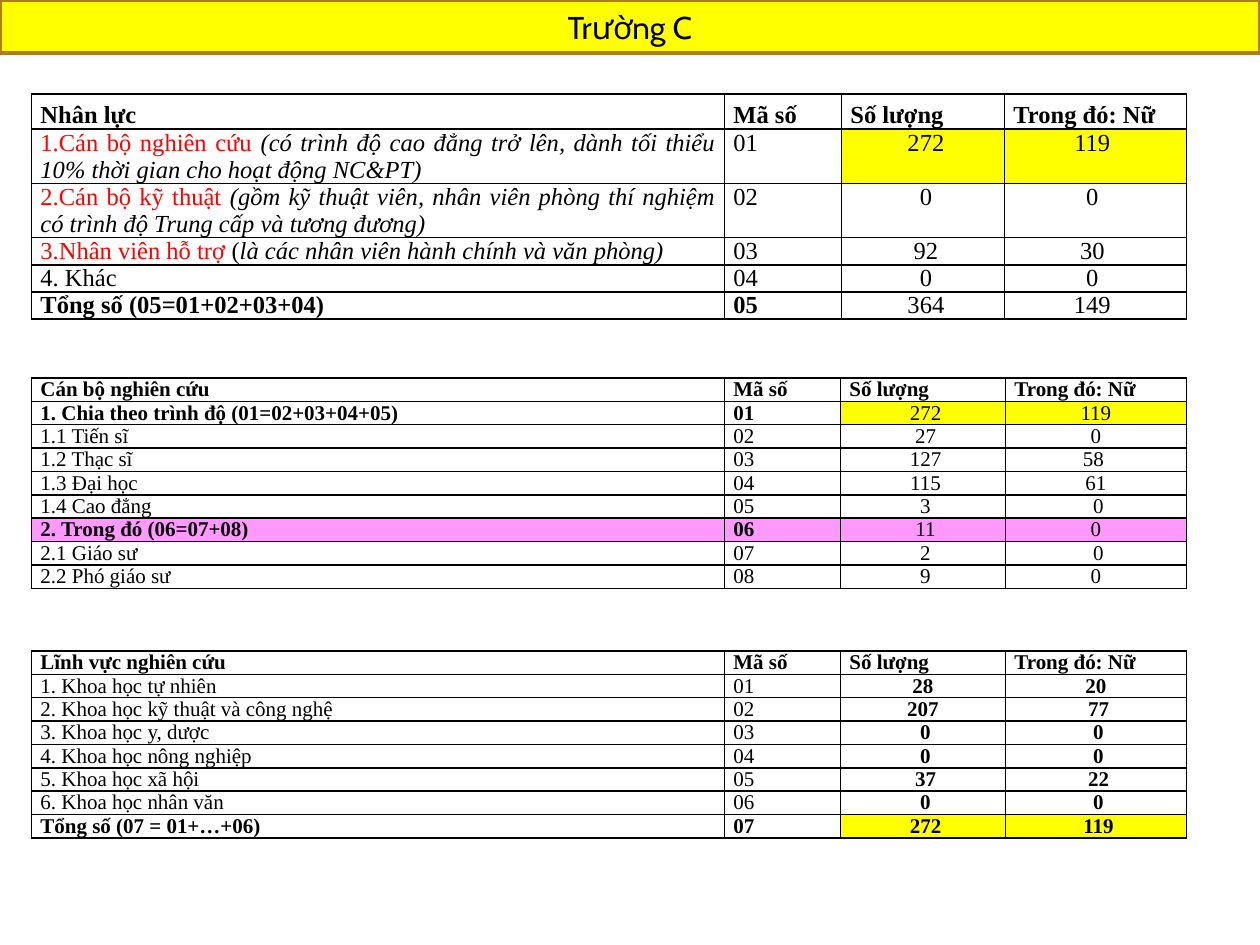
from lxml import etree
from pptx import Presentation
from pptx.dml.color import RGBColor
from pptx.enum.shapes import MSO_SHAPE
from pptx.enum.text import MSO_ANCHOR, PP_ALIGN
from pptx.oxml.ns import qn
from pptx.util import Emu, Pt

RECT = MSO_SHAPE.RECTANGLE
MIDDLE = MSO_ANCHOR.MIDDLE
CENTER, JUSTIFY = PP_ALIGN.CENTER, PP_ALIGN.JUSTIFY
PX = 914400 // 126
BLACK, RED, YELLOW, PINK = "000000", "FF0000", "FFFF00", "FF99FF"
HEAD = ("Mã số", "Số lượng", "Trong đó: Nữ")

# Content: "~" stands for a no-break space; a label may be a list of
# (text, format) runs; fills map a row to (first column, colour)
TITLE = "Trường C"
TABLES = [
    dict(
        top=94, size=14, cols=(693, 117, 163, 182),
        heights=(35, 54, 54, 27, 27, 27), spacing=1.3,
        bold={5}, strong=False, fills={1: (2, YELLOW)},
        rows=[
            ("Nhân lực", *HEAD),
            ([("1.Cán bộ nghiên cứu ", dict(color=RED)),
              ("(có trình độ cao đẳng trở lên, dành tối thiểu 10% thời gian "
               "cho hoạt động NC&PT)", dict(italic=True))],
             "01", "~272", "119~"),
            ([("2.Cán bộ kỹ thuật ", dict(color=RED)),
              ("(gồm kỹ thuật viên, nhân viên phòng thí nghiệm có trình độ "
               "Trung cấp và tương đương)", dict(italic=True))],
             "02", "~0", "0~"),
            ([("3.Nhân viên hỗ trợ ", dict(color=RED)), ("(", {}),
              ("là các nhân viên hành chính và văn phòng)",
               dict(italic=True))],
             "03", "~92", "30~"),
            ("4. Khác ", "04", "~0", "0~"),
            ("Tổng số (05=01+02+03+04)", "05", "~364", "149~"),
        ]),
    dict(
        top=378, size=12, cols=(693, 116, 165, 181),
        heights=(23,) * 9, spacing=None,
        bold={1, 6}, strong=False, fills={1: (2, YELLOW), 6: (0, PINK)},
        rows=[
            ("Cán bộ nghiên cứu", *HEAD),
            ("1. Chia theo trình độ (01=02+03+04+05)", "01", "~272", "119"),
            ("1.1 Tiến sĩ", "02", "~27", "0"),
            ("1.2 Thạc sĩ", "03", "~127", "58~"),
            ("1.3 Đại học", "04", "~115", "61"),
            ("1.4 Cao đẳng", "05", "~3", "~0"),
            ("2. Trong đó (06=07+08)", "06", "~11", "0"),
            ("2.1 Giáo sư", "07", "~2", "~0"),
            ("2.2 Phó giáo sư", "08", "~9", "0"),
        ]),
    dict(
        top=651, size=12, cols=(693, 116, 165, 181),
        heights=(23,) * 8, spacing=None,
        bold={7}, strong=True, fills={7: (2, YELLOW)},
        rows=[
            ("Lĩnh vực nghiên cứu", *HEAD),
            ("1. Khoa học tự nhiên", "01", "28", " 20~"),
            ("2. Khoa học kỹ thuật và công nghệ", "02", "207", "~77"),
            ("3. Khoa học y, dược", "03", "~0", "~0"),
            ("4. Khoa học nông nghiệp", "04", "~0", "~0"),
            ("5. Khoa học xã hội", "05", "~37", "~22"),
            ("6. Khoa học nhân văn ", "06", "~0", "~0"),
            ("Tổng số (07 = 01+…+06)", "07", "~272", "~119"),
        ]),
]


def px(n):
    return Emu(n * PX)


def rgb(code):
    return RGBColor.from_string(code)


def write(frame, text, size, font="Times New Roman", align=CENTER, bold=False,
          gap=0, spacing=None):
    para = frame.paragraphs[0]
    para.alignment = align
    para.space_before = para.space_after = Pt(gap)
    if spacing:
        para.line_spacing = spacing
    runs = [(text, {})] if isinstance(text, str) else text
    for part, form in runs:
        run = para.add_run()
        run.text = part.replace("~", chr(160))
        run.font.name, run.font.size = font, Pt(size)
        run.font.bold = bold
        run.font.italic = form.get("italic", False)
        run.font.color.rgb = rgb(form.get("color", BLACK))


def border(cell):
    props = cell._tc.get_or_add_tcPr()
    for side in ("lnL", "lnR", "lnT", "lnB"):
        line = etree.SubElement(props, qn("a:" + side), w=str(Pt(1)))
        fill = etree.SubElement(line, qn("a:solidFill"))
        etree.SubElement(fill, qn("a:srgbClr"), val=BLACK)


def paint(cell, color):
    if color:
        cell.fill.solid()
        cell.fill.fore_color.rgb = rgb(color)
    else:
        cell.fill.background()


def add_grid(slide, data):
    rows, cols, heights = data["rows"], data["cols"], data["heights"]
    grid = slide.shapes.add_table(
        len(rows), len(cols), Emu(63 * PX // 2), px(data["top"]),
        px(sum(cols)), px(sum(heights))).table
    grid.first_row = grid.horz_banding = False
    for col, width in zip(grid.columns, cols):
        col.width = px(width)
    for r, row in enumerate(rows):
        grid.rows[r].height = px(heights[r])
        first, color = data["fills"].get(r, (len(cols), None))
        for c, text in enumerate(row):
            cell = grid.cell(r, c)
            cell.margin_left = cell.margin_right = px(9)
            cell.margin_top = cell.margin_bottom = 0
            border(cell)
            paint(cell, color if c >= first else None)
            number = r > 0 and c > 1
            bold = data["strong"] if number else r == 0 or r in data["bold"]
            write(cell.text_frame, text, data["size"], bold=bold, gap=3,
                  align=CENTER if number else JUSTIFY,
                  spacing=data["spacing"] if r == 0 else None)


def main():
    deck = Presentation()
    deck.slide_width, deck.slide_height = px(1260), px(945)
    slide = deck.slides.add_slide(deck.slide_layouts[6])

    # Tables
    for data in TABLES:
        add_grid(slide, data)

    # Title bar
    bar = slide.shapes.add_shape(RECT, 0, 0, px(1260), px(53))
    bar.shadow.inherit = False
    bar.fill.solid()
    bar.fill.fore_color.rgb = rgb(YELLOW)
    bar.line.color.rgb = rgb("B27822")
    bar.line.width = Pt(2)
    bar.text_frame.word_wrap = True
    bar.text_frame.vertical_anchor = MIDDLE
    write(bar.text_frame, TITLE, 18, font="Cabin")

    deck.save("out.pptx")


if __name__ == "__main__":
    main()
